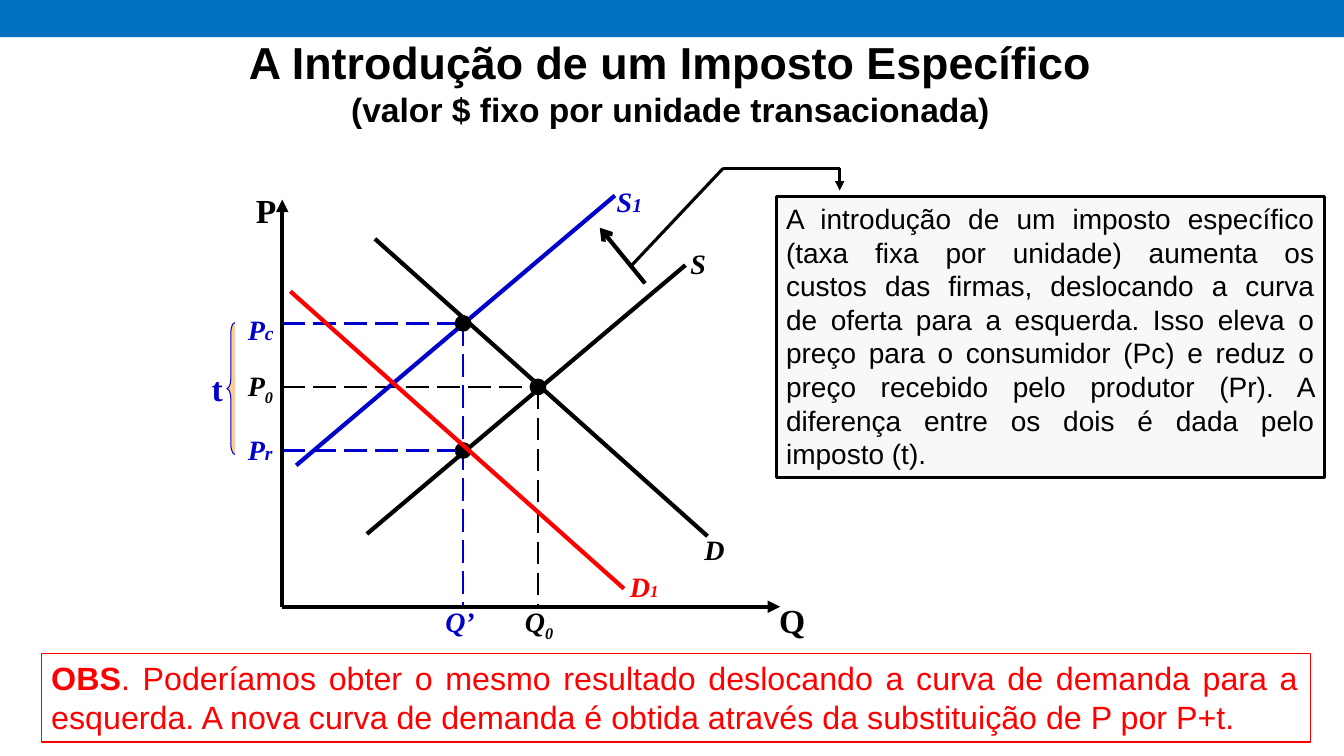
from lxml import etree
from pptx import Presentation
from pptx.dml.color import RGBColor
from pptx.enum import dml, shapes, text
from pptx.oxml import ns
from pptx.util import Pt

BLACK, BLUE, RED = "000000", "0000CC", "FF0000"
SANS, SERIF = "Arial", "Times New Roman"


def colour(value):
    """Turn a hex string into a colour."""
    return RGBColor.from_string(value)


def add_span(para, words, size, face, ink, bold=False, italic=False, baseline=0):
    """Append one formatted run to a paragraph."""
    font_holder = para.add_run()
    font_holder.text = words
    font = font_holder.font
    font.size, font.name, font.bold, font.italic = Pt(size), face, bold, italic
    font.color.rgb = colour(ink)
    if baseline:
        font._element.set("baseline", str(baseline * 1000))


def add_panel(page, kind, box, fill=None, line=None, width=1):
    """Add a preset shape with a plain fill and outline."""
    panel = page.shapes.add_shape(kind, *map(Pt, box))
    panel.shadow.inherit = False
    if fill:
        panel.fill.solid()
        panel.fill.fore_color.rgb = colour(fill)
    else:
        panel.fill.background()
    if line:
        panel.line.color.rgb = colour(line)
        panel.line.width = Pt(width)
    else:
        panel.line.fill.background()
    return panel


def add_line(page, start, end, ink, width, dashed=False, arrow=None):
    """Draw a straight line, with an optional arrowhead at its end."""
    line = page.shapes.add_connector(
        shapes.MSO_CONNECTOR.STRAIGHT, *map(Pt, (*start, *end)))
    line.line.color.rgb = colour(ink)
    line.line.width = Pt(width)
    if dashed:
        line.line.dash_style = dml.MSO_LINE.LONG_DASH
    if arrow:
        head = etree.SubElement(line.line._get_or_add_ln(), ns.qn("a:tailEnd"))
        head.set("type", arrow)
    etree.SubElement(line._element.spPr, ns.qn("a:effectLst"))


def justified_text(panel):
    """Prepare a panel for justified text and return its paragraph."""
    frame = panel.text_frame
    frame.word_wrap = True
    frame.vertical_anchor = text.MSO_ANCHOR.TOP
    para = frame.paragraphs[0]
    para.alignment = text.PP_ALIGN.JUSTIFY
    return para


def build_heading(page, box):
    """Place the title and its subtitle line."""
    title = page.shapes.title
    title.left, title.top, title.width, title.height = map(Pt, box)
    frame = title.text_frame
    frame.word_wrap = True
    frame.auto_size = text.MSO_AUTO_SIZE.NONE
    frame.vertical_anchor = text.MSO_ANCHOR.MIDDLE
    para = frame.paragraphs[0]
    para.alignment = text.PP_ALIGN.CENTER
    add_span(para, "A Introdução de um Imposto Específico", 32, SANS, BLACK, True)
    para.add_line_break()
    add_span(para, "(valor $ fixo por unidade transacionada)", 24, SANS, BLACK, True)


def build_explanation(page, box):
    """Place the boxed explanation of the tax."""
    panel = add_panel(page, shapes.MSO_SHAPE.RECTANGLE, box, "F8F8F8", BLACK, 2.25)
    para = justified_text(panel)
    lines = (
        "A introdução de um imposto específico (taxa fixa por unidade) aumenta os",
        "custos das firmas, deslocando a curva",
        "de oferta para a esquerda. Isso eleva o preço para o consumidor (Pc) e "
        "reduz o preço recebido pelo produtor (Pr). A diferença entre os dois é "
        "dada pelo imposto (t).")
    for index, words in enumerate(lines):
        if index:
            para.add_line_break()
        add_span(para, words, 20, SANS, BLACK)


def build_note(page, box):
    """Place the red remark at the foot of the slide."""
    panel = add_panel(page, shapes.MSO_SHAPE.RECTANGLE, box, None, RED, 0.75)
    para = justified_text(panel)
    add_span(para, "OBS", 23, SANS, RED, True)
    add_span(para, ". Poderíamos obter o mesmo resultado deslocando a curva de demanda "
             "para a esquerda. A nova curva de demanda é obtida através da "
             "substituição de P por P+t.", 23, SANS, RED)


def build_diagram(page, box):
    """Draw the supply and demand diagram in a box whose lower left is the origin."""
    left, top, width, height = box
    price_c, price_0, price_r = 202.4, 157, 111.6
    quantity_1, quantity_0 = 129.2, 182.7

    def at(x, y):
        """Convert a distance right of and above the origin to a slide point."""
        return left + x, top + height - y

    guides = (
        ((quantity_1, price_c), (quantity_1, 0), BLUE),
        ((0, price_c), (quantity_1, price_c), BLUE),
        ((0, price_r), (quantity_1, price_r), BLUE),
        ((0, price_0), (quantity_0, price_0), BLACK),
        ((quantity_0, price_0), (quantity_0, 0), BLACK))
    for start, end, ink in guides:
        add_line(page, at(*start), at(*end), ink, 2, dashed=True)

    curves = (
        ((10, 101), (237.6, 293.7), BLUE, None),
        ((60.5, 52), (288, 244), BLACK, None),
        ((66.2, 262.8), (303.8, 50.4), BLACK, None),
        ((0, 0), (0, height), BLACK, "triangle"),
        ((0, 0), (width, 0), BLACK, "triangle"),
        ((259.2, 231), (226.8, 270.7), BLACK, "arrow"))
    for start, end, ink, arrow in curves:
        add_line(page, at(*start), at(*end), ink, 3, arrow=arrow)

    leader = ((248.4, 242.6), (315, 313.2), (398.2, 313.2), (398.2, 297.3))
    for start, end in zip(leader, leader[1:]):
        arrow = "triangle" if end == leader[-1] else None
        add_line(page, at(*start), at(*end), BLACK, 2.25, arrow=arrow)

    dot = 11
    for x, y in ((quantity_1, price_c), (quantity_0, price_0), (quantity_1, price_r)):
        corner = at(x - dot / 2, y + dot / 2)
        add_panel(page, shapes.MSO_SHAPE.OVAL, (*corner, dot, dot), BLACK, BLACK)
    brace = add_panel(page, shapes.MSO_SHAPE.LEFT_BRACE,
                      (*at(-39.6, 203), 5.8, 94.3), "FFCC99", BLUE, 0.75)
    brace.adjustments[0], brace.adjustments[1] = 1.31, 0.5
    add_line(page, at(5.8, 225.3), at(244.1, 12.9), RED, 3)

    labels = (
        (-25.9, 301.6, 28.8, "P", "", 24, BLACK),
        (347.8, 8.6, 33, "Q", "", 24, BLACK),
        (-57.6, 174.2, 22.3, "t", "", 24, BLUE),
        (-31.7, 213.8, 33, "P", "c", 14, BLUE),
        (-31.7, 173.5, 33, "P", "0", 20, BLACK),
        (-31.7, 128.1, 33, "P", "r", 14, BLUE),
        (109.4, 5, 36, "Q’", "", 20, BLUE),
        (166.3, 5, 36, "Q", "0", 20, BLACK),
        (231.8, 305.2, 32.4, "S", "1", 14, BLUE),
        (284.4, 260.6, 26, "S", "", 20, BLACK),
        (294.5, 56.8, 28.8, "D", "", 20, BLACK),
        (241.2, 30.2, 35.3, "D", "1", 12, RED))
    for x, y, wide, letter, index, size, ink in labels:
        large = size == 24
        label = page.shapes.add_textbox(
            *map(Pt, (*at(x, y), wide, 36 if large else 31)))
        frame = label.text_frame
        frame.word_wrap = False
        para = frame.paragraphs[0]
        add_span(para, letter, 24 if large else 20, SERIF, ink, True, not large)
        if index:
            add_span(para, index, size, SERIF, ink, True, True,
                     -25 if size == 20 else 0)


def build_slide(deck):
    """Assemble the tax slide from its regions."""
    page = deck.slides.add_slide(deck.slide_layouts[5])
    add_panel(page, shapes.MSO_SHAPE.RECTANGLE, (0, 0, 960, 26.6), "0070C0")
    build_heading(page, (146.2, 16.6, 665.3, 84.2))
    build_explanation(page, (554.4, 140.4, 391.7, 200.9))
    build_diagram(page, (201.6, 142.6, 355.7, 290.8))
    build_note(page, (29.5, 466.6, 906.5, 63.4))


def main():
    """Build and save the deck."""
    deck = Presentation()
    deck.slide_width, deck.slide_height = Pt(960), Pt(540)
    build_slide(deck)
    deck.save("out.pptx")


if __name__ == "__main__":
    main()
